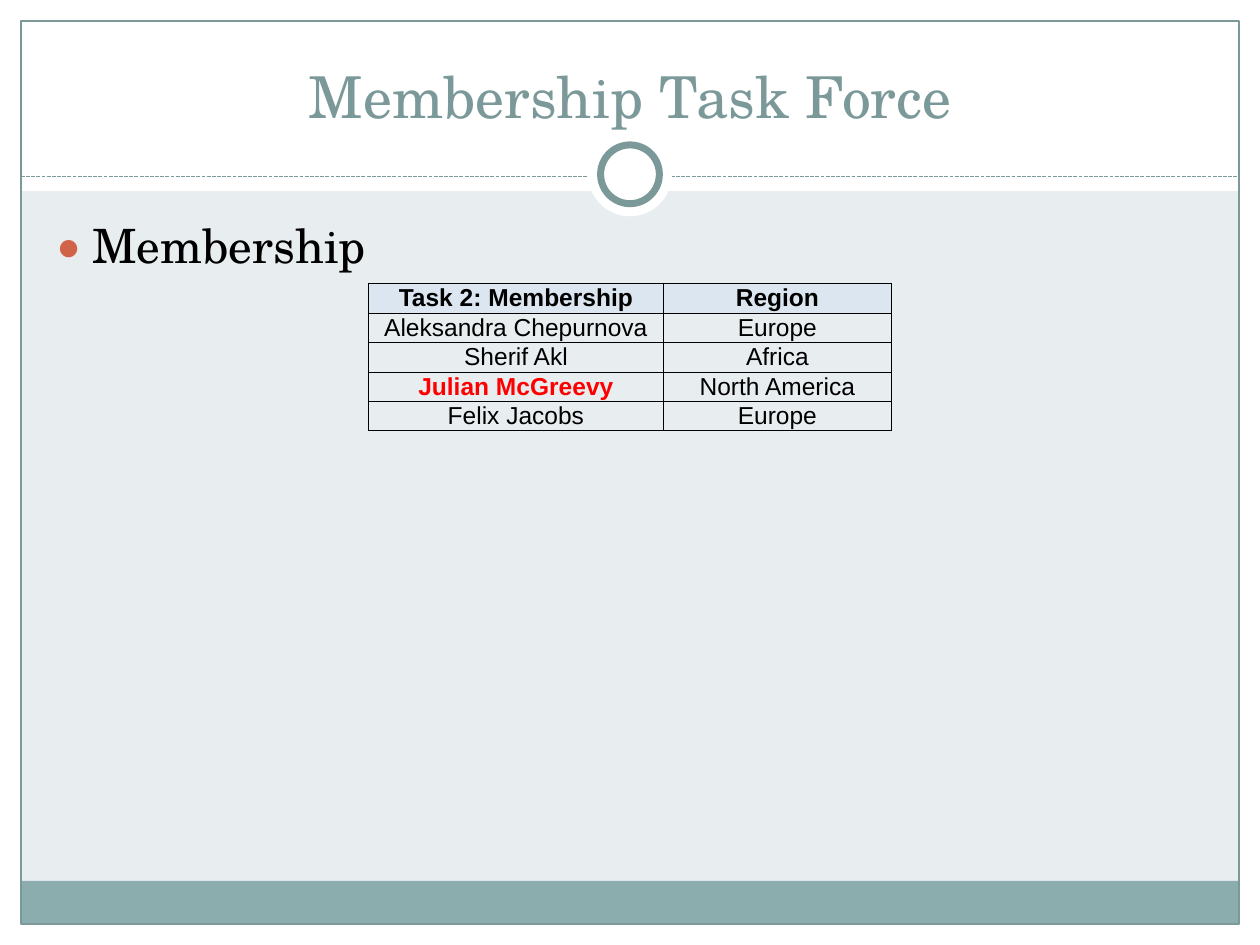
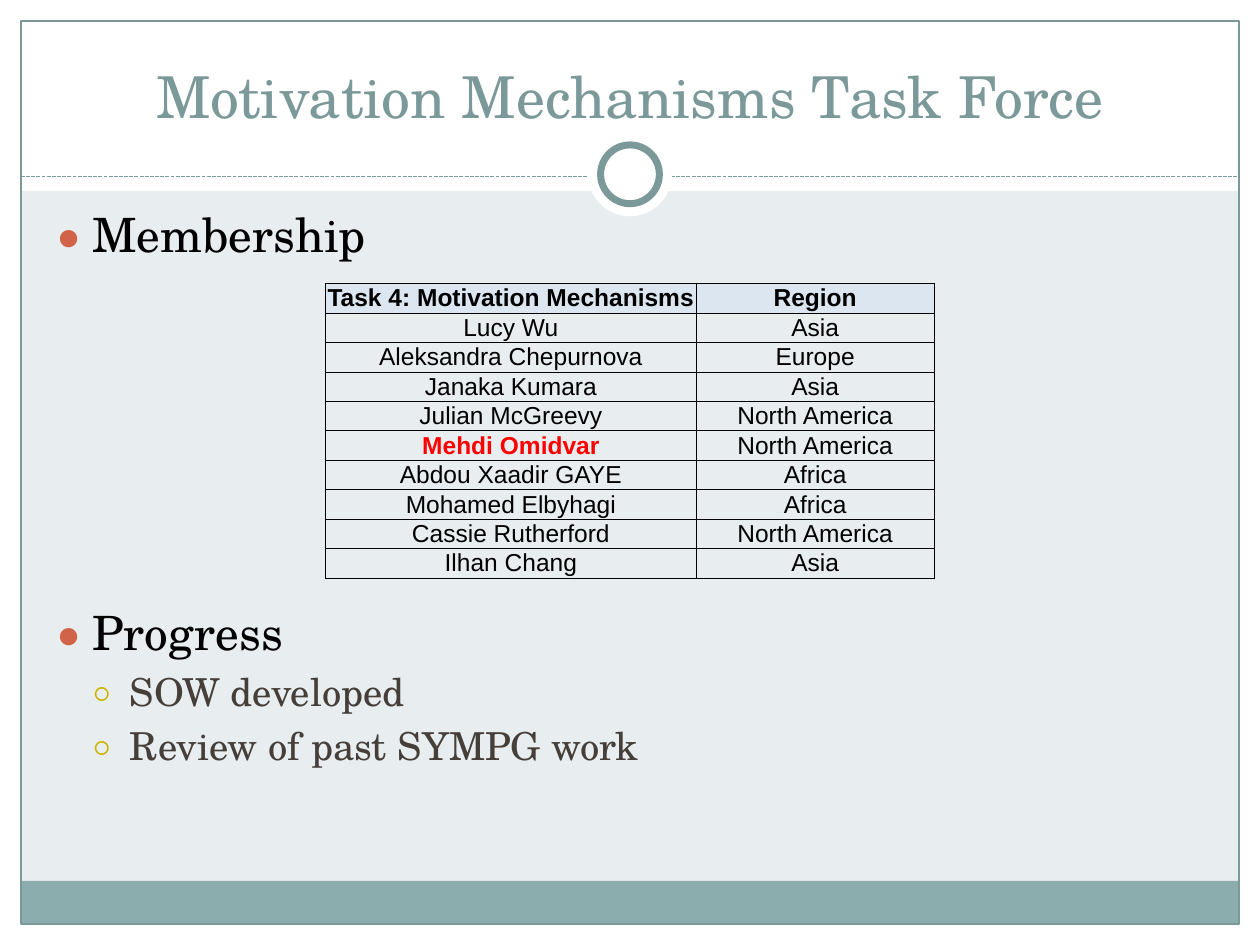
from lxml.etree import SubElement
from pptx import Presentation
from pptx.dml.color import RGBColor
from pptx.enum.dml import MSO_LINE
from pptx.enum.shapes import MSO_CONNECTOR, MSO_SHAPE
from pptx.enum.text import MSO_ANCHOR, MSO_AUTO_SIZE, PP_ALIGN
from pptx.oxml import parse_xml
from pptx.oxml.ns import nsdecls, qn
from pptx.util import Inches, Pt

WIDTH, HEIGHT = Inches(10), Inches(7.5)
COLS, ROWS = 60, 45
MIST = RGBColor(0xE8, 0xED, 0xF0)
WHITE = RGBColor(0xFF, 0xFF, 0xFF)
BLACK = RGBColor(0x00, 0x00, 0x00)
TEAL = RGBColor(0x7C, 0x99, 0x9A)
SAGE = RGBColor(0x8C, 0xAD, 0xAE)
RUST = RGBColor(0xD1, 0x63, 0x49)
GOLD = RGBColor(0xCC, 0xB4, 0x00)
BROWN = RGBColor(0x46, 0x3E, 0x38)
SKY = RGBColor(0xDC, 0xE6, 0xF1)
RED = RGBColor(0xFF, 0x00, 0x00)
SERIF, SANS = "TeX Gyre Schola", "Arial"
LEVELS = [(27, BLACK, "●", RUST, 85), (22, BROWN, "○", GOLD, 70)]

TASK_TWO = [
    ("Task 2: Membership", "Region"),
    ("Aleksandra Chepurnova", "Europe"),
    ("Sherif Akl", "Africa"),
    ("Julian McGreevy", "North America"),
    ("Felix Jacobs", "Europe"),
]
TASK_FOUR = [
    ("Task 4: Motivation Mechanisms", "Region"),
    ("Lucy Wu", "Asia"),
    ("Aleksandra Chepurnova", "Europe"),
    ("Janaka Kumara", "Asia"),
    ("Julian McGreevy", "North America"),
    ("Mehdi Omidvar", "North America"),
    ("Abdou Xaadir GAYE", "Africa"),
    ("Mohamed Elbyhagi", "Africa"),
    ("Cassie Rutherford", "North America"),
    ("Ilhan Chang", "Asia"),
]


def grid(col, row, wide, high):
    across, down = WIDTH / COLS, HEIGHT / ROWS
    return (int(col * across), int(row * down),
            int(wide * across), int(high * down))


def style(par, font, size, color, bold=False):
    for run in par.runs:
        run.font.name = font
        run.font.size = Pt(size)
        run.font.color.rgb = color
        run.font.bold = bold


def add_box(slide, kind, area, fill=None, line=None, weight=0.75):
    box = slide.shapes.add_shape(kind, *grid(*area))
    box.shadow.inherit = False
    if fill is None:
        box.fill.background()
    else:
        box.fill.solid()
        box.fill.fore_color.rgb = fill
    if line is None:
        box.line.fill.background()
    else:
        box.line.color.rgb = line
        box.line.width = Pt(weight)
    return box


def add_rule(slide, row):
    left, top, wide, _ = grid(1, row, COLS - 2, 0)
    rule = slide.shapes.add_connector(
        MSO_CONNECTOR.STRAIGHT, left, top, left + wide, top)
    rule.line.color.rgb = TEAL
    rule.line.width = Pt(0.75)
    rule.line.dash_style = MSO_LINE.SQUARE_DOT
    SubElement(rule.element.spPr, qn("a:effectLst"))
    return rule


def add_ring(slide, radius, line=None):
    area = COLS / 2 - radius, 8.3 - radius, 2 * radius, 2 * radius
    return add_box(slide, MSO_SHAPE.OVAL, area, WHITE, line, 4)


def add_frame(slide):
    rect = MSO_SHAPE.RECTANGLE
    edges = [(0, ROWS - 1, COLS, 1), (0, 0, COLS, 9.1),
             (0, 0, 1, ROWS), (COLS - 1, 0, 1, ROWS)]
    parts = [add_box(slide, rect, edge, WHITE) for edge in edges]
    parts += [
        add_box(slide, rect, (1, 41.95, COLS - 2, 2.05), SAGE),
        add_box(slide, rect, (1, 1, COLS - 2, ROWS - 2), line=TEAL),
        add_rule(slide, 8.4),
        add_ring(slide, 2),
        add_ring(slide, 1.4, TEAL),
    ]
    layout = slide.slide_layout
    layout.background.fill.solid()
    layout.background.fill.fore_color.rgb = MIST
    for index, part in enumerate(parts, 20):
        part.element.xpath(".//p:cNvPr")[0].set("id", str(index))
        layout.shapes.element.append(part.element)


def set_title(slide, text):
    title = slide.shapes.title
    title.left, title.top, title.width, title.height = grid(2, 1.5, 56, 5)
    frame = title.text_frame
    frame.text = text
    frame.auto_size = MSO_AUTO_SIZE.NONE
    frame.vertical_anchor = MSO_ANCHOR.BOTTOM
    par = frame.paragraphs[0]
    par.alignment = PP_ALIGN.CENTER
    style(par, SERIF, 33, TEAL)


def set_bullet(par, level):
    _, _, mark, color, share = LEVELS[level]
    props = par._p.get_or_add_pPr()
    props.set("marL", str(Inches(0.3 * (level + 1))))
    props.set("indent", str(-Inches(0.3)))
    tint = SubElement(props, qn("a:buClr"))
    SubElement(tint, qn("a:srgbClr")).set("val", str(color))
    SubElement(props, qn("a:buSzPct")).set("val", str(share * 1000))
    SubElement(props, qn("a:buFont")).set("typeface", SERIF)
    SubElement(props, qn("a:buChar")).set("char", mark)


def add_list(slide, row, items):
    frame = slide.shapes.add_textbox(*grid(2, row, 57, 34)).text_frame
    frame.word_wrap = True
    for index, (text, level, gap) in enumerate(items):
        par = frame.add_paragraph() if index else frame.paragraphs[0]
        par.text = text
        par.level = level
        size, color = LEVELS[level][:2]
        par.space_before = Pt(gap or size * 0.2)
        set_bullet(par, level)
        style(par, SERIF, size, color)


def set_edges(cell):
    props = cell._tc.get_or_add_tcPr()
    for index, side in enumerate(("lnL", "lnR", "lnT", "lnB")):
        props.insert(index, parse_xml(
            f'<a:{side} {nsdecls("a")} w="{Pt(0.5)}"><a:solidFill>'
            f'<a:srgbClr val="{BLACK}"/></a:solidFill></a:{side}>'))


def set_cell(cell, text, head, lead):
    cell.margin_left = cell.margin_right = 0
    cell.margin_top = cell.margin_bottom = 0
    cell.vertical_anchor = MSO_ANCHOR.MIDDLE
    if head:
        cell.fill.solid()
        cell.fill.fore_color.rgb = SKY
    else:
        cell.fill.background()
    set_edges(cell)
    cell.text_frame.text = text
    par = cell.text_frame.paragraphs[0]
    par.alignment = PP_ALIGN.CENTER
    style(par, SANS, 14, RED if lead else BLACK, head or lead)


def add_roster(slide, rows, widths, leader):
    wide, high = sum(widths), Inches(0.22)
    top = grid(0, 13.5, 0, 0)[1]
    table = slide.shapes.add_table(
        len(rows), len(widths), (WIDTH - wide) // 2, top,
        wide, high * len(rows)).table
    table.first_row = table.horz_banding = False
    for column, width in zip(table.columns, widths):
        column.width = width
    for r, row in enumerate(rows):
        table.rows[r].height = high
        for c, text in enumerate(row):
            set_cell(table.cell(r, c), text, r == 0, text == leader)


def main():
    deck = Presentation()
    deck.slide_width, deck.slide_height = WIDTH, HEIGHT
    layout = deck.slide_layouts[5]

    slide = deck.slides.add_slide(layout)
    add_frame(slide)
    set_title(slide, "Membership Task Force")
    add_list(slide, 10, [("Membership", 0, None)])
    add_roster(slide, TASK_TWO, (Inches(2.34), Inches(1.81)),
               "Julian McGreevy")

    slide = deck.slides.add_slide(layout)
    set_title(slide, "Motivation Mechanisms Task Force")
    add_list(slide, 9.5, [
        ("Membership", 0, None),
        ("Progress", 0, 195),
        ("SOW developed", 1, None),
        ("Review of past SYMPG work", 1, None),
    ])
    add_roster(slide, TASK_FOUR, (Inches(2.94), Inches(1.89)),
               "Mehdi Omidvar")

    deck.save("out.pptx")


if __name__ == "__main__":
    main()
